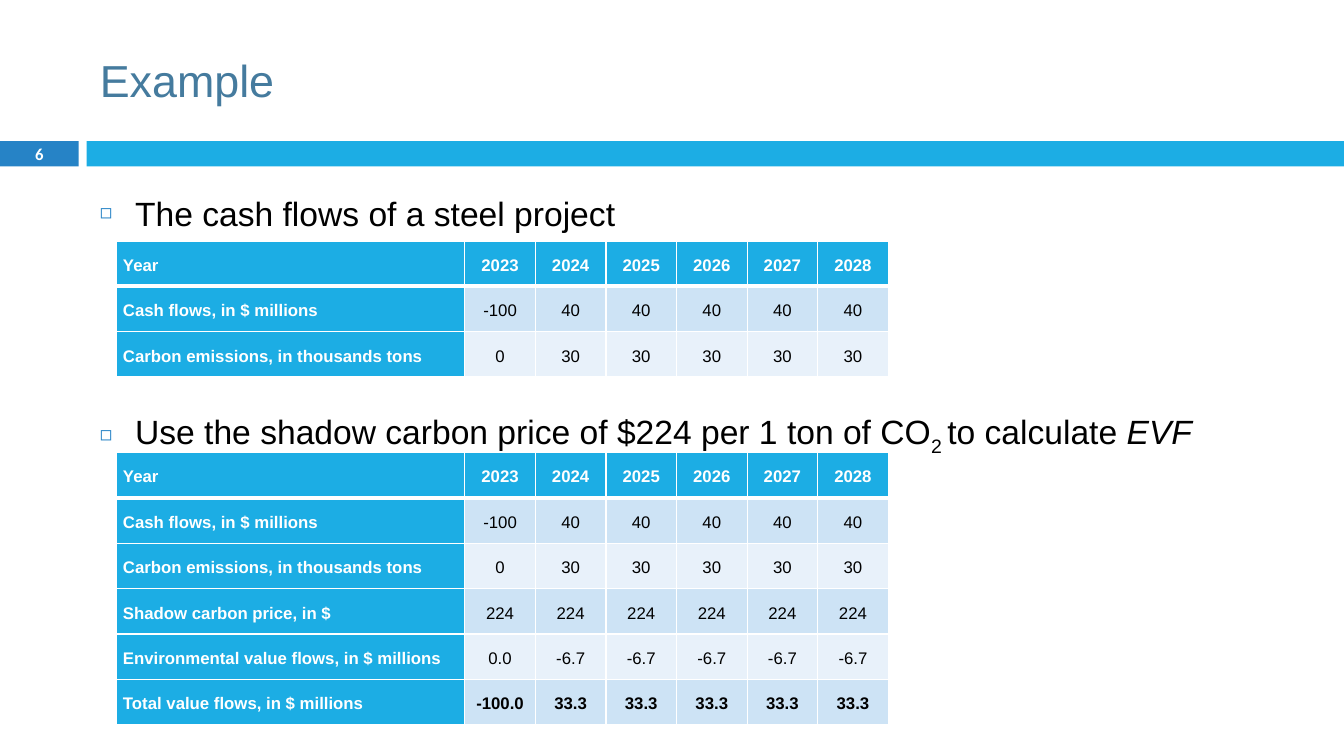
"""Build the carbon price example slide with its two cash flow tables."""
from lxml.etree import SubElement as Sub
from pptx import Presentation
from pptx.dml.color import RGBColor as RGB
from pptx.enum.shapes import MSO_SHAPE as SHAPE
from pptx.enum.text import MSO_ANCHOR as ANCHOR, MSO_AUTO_SIZE as AUTO, PP_ALIGN as ALIGN
from pptx.oxml.ns import qn
from pptx.util import Inches, Pt

SKY, BLUE, PALE, MIST = "1CADE4", "2683C6", "CDE3F5", "E8F1FA"
WHITE, BLACK, SLATE = "FFFFFF", "000000", "457B9E"


def hue(code):
    return RGB.from_string(code)


def write(para, text, size=12, color=BLACK, bold=False, italic=False,
          face="Arial", align=ALIGN.LEFT, base=0):
    para.alignment = align
    run = para.add_run()
    run.text = text
    font = run.font
    font.name, font.size, font.bold, font.italic = face, Pt(size), bold, italic
    font.color.rgb = hue(color)
    if base:
        run._r.get_or_add_rPr().set("baseline", str(base * 1000))


deck = Presentation()
unit = Inches(0.01)
deck.slide_width, deck.slide_height = 1333 * unit, 750 * unit
slide = deck.slides.add_slide(deck.slide_layouts[1])
shapes = slide.shapes
title, body = shapes.title, slide.placeholders[1]

edge, gap, band = 78, 8, 140
for left, wide, color in [(0, edge, BLUE), (edge + gap, 1333 - edge - gap, SKY)]:
    bar = shapes.add_shape(SHAPE.RECTANGLE, left * unit, band * unit, wide * unit, 25 * unit)
    bar.shadow.inherit = False
    bar.fill.solid()
    bar.fill.fore_color.rgb = hue(color)
    bar.line.fill.background()

page = shapes.add_textbox(0, 139 * unit, edge * unit, 27 * unit)
page.text_frame.word_wrap = True
page.text_frame.vertical_anchor = ANCHOR.MIDDLE
write(page.text_frame.paragraphs[0], "6", size=11.9, color=WHITE, bold=True,
      face="Calibri", align=ALIGN.CENTER)

for holder, top, wide, high, anchor in [
    (title, 25, 1189, 108, ANCHOR.MIDDLE),
    (body, 166, 1136, 539, ANCHOR.TOP),
]:
    holder.left, holder.top = 89 * unit, top * unit
    holder.width, holder.height = wide * unit, high * unit
    holder.text_frame.auto_size = AUTO.NONE
    holder.text_frame.vertical_anchor = anchor
write(title.text_frame.paragraphs[0], "Example", size=32, color=SLATE)

points = [
    (7, [("The cash flows of a steel project", {})]),
    (111, [("Use the shadow carbon price of $224 per 1 ton of CO", {}),
           ("2 ", {"base": -25}),
           ("to calculate ", {}),
           ("EVF", {"italic": True})]),
]
body.text_frame.add_paragraph()
for para, (space, parts) in zip(body.text_frame.paragraphs, points):
    para.line_spacing, para.space_before = 1.5, Pt(space)
    for text, style in parts:
        write(para, text, size=24, **style)
    props = para._p.get_or_add_pPr()
    props.set("marL", str(35 * unit))
    props.set("indent", str(-35 * unit))
    Sub(Sub(props, qn("a:buClr")), qn("a:srgbClr"), val=BLUE)
    Sub(props, qn("a:buSzPct"), val="60000")
    Sub(props, qn("a:buChar"), char="◻")

flows = [
    ["Year", *map(str, range(2023, 2029))],
    ["Cash flows, in $ millions", "-100"] + ["40"] * 5,
    ["Carbon emissions, in thousands tons", "0"] + ["30"] * 5,
]
values = flows + [
    ["Shadow carbon price, in $"] + ["224"] * 6,
    ["Environmental value flows, in $ millions", "0.0"] + ["-6.7"] * 5,
    ["Total value flows, in $ millions", "-100.0"] + ["33.3"] * 5,
]
for top, rows in [(449, values), (239, flows)]:
    high = 45 * len(rows)
    table = shapes.add_table(len(rows), 7, 115 * unit, top * unit, 764 * unit, high * unit).table
    for col, item in enumerate(table.columns):
        item.width = (70 if col else 346) * unit
    for row, line in enumerate(rows):
        for col, text in enumerate(line):
            cell = table.cell(row, col)
            head = row == 0 or col == 0
            cell.vertical_anchor = ANCHOR.MIDDLE
            cell.margin_left = cell.margin_right = 7 * unit
            cell.margin_top = cell.margin_bottom = 0
            thick = {"lnT": 3 if row == 1 else 1, "lnB": 3 if row == 0 else 1}
            for side in ("lnL", "lnR", "lnT", "lnB"):
                rule = Sub(cell._tc.get_or_add_tcPr(), qn(f"a:{side}"), w=str(Pt(thick.get(side, 1))))
                Sub(Sub(rule, qn("a:solidFill")), qn("a:srgbClr"), val=WHITE)
            cell.fill.solid()
            cell.fill.fore_color.rgb = hue(SKY if head else PALE if row % 2 else MIST)
            para = cell.text_frame.paragraphs[0]
            para.line_spacing = Pt(16)
            para.space_before = para.space_after = Pt(2 if row > 1 and col > 1 else 1)
            write(para, text, color=WHITE if head else BLACK, bold=head or row == 5,
                  align=ALIGN.CENTER if col else ALIGN.LEFT)

deck.save("out.pptx")
